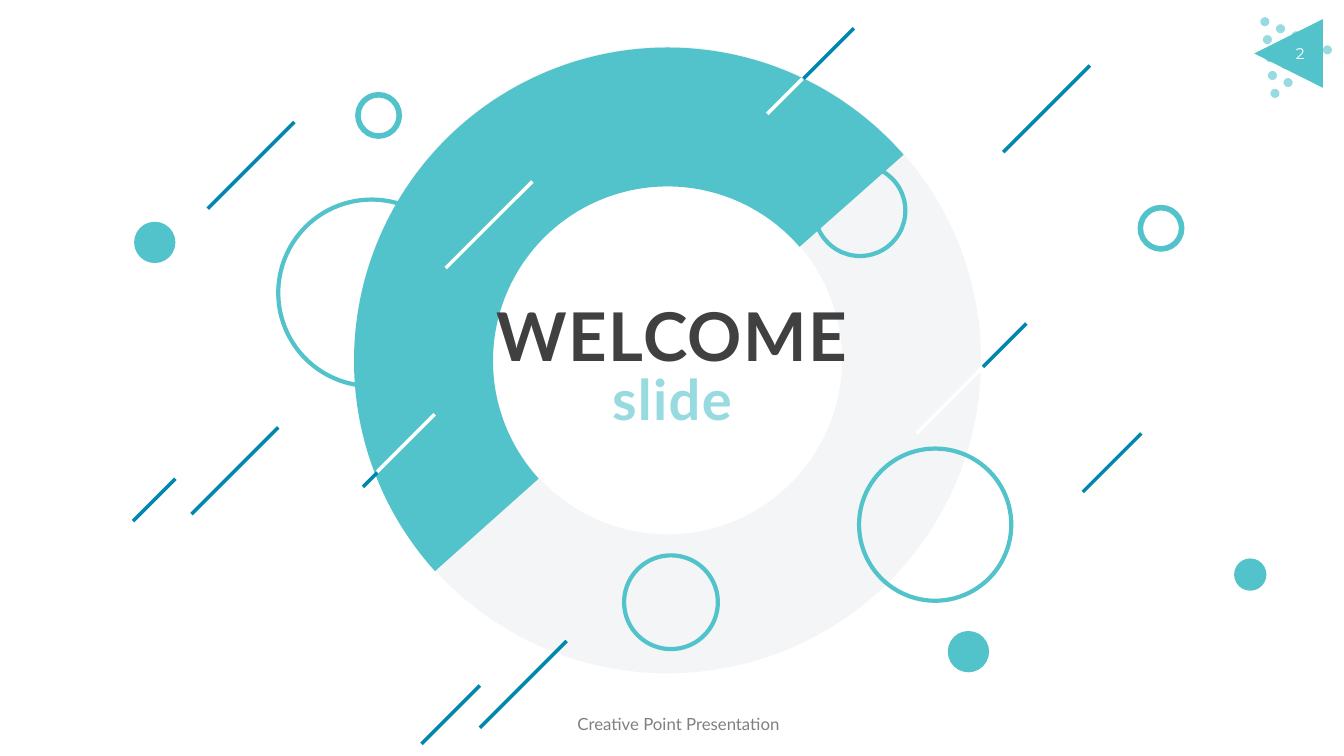
import dataclasses
import typing

import lxml.etree
import pptx
import pptx.dml.color
import pptx.enum.shapes
import pptx.enum.text
import pptx.oxml.ns
import pptx.util

Inches = pptx.util.Inches
Pt = pptx.util.Pt
Kind = pptx.enum.shapes.MSO_SHAPE

TEAL, PALE, BLUE = "52C3CB", "97DAE0", "0187AD"
GREY, WHITE, DARK, MID = "F4F5F6", "FFFFFF", "404040", "808080"


@dataclasses.dataclass
class Form:
    x: float
    y: float
    size: float
    fill: typing.Optional[str] = None
    line: typing.Optional[str] = None
    width: float = 0
    kind: Kind = Kind.OVAL
    turn: float = 0
    angles: tuple = ()


@dataclasses.dataclass
class Dash:
    """A line rising at 45 degrees from its lower left end."""
    x: float
    y: float
    rise: float
    color: str = BLUE


@dataclasses.dataclass
class Label:
    text: str
    box: tuple
    font: dict
    color: str
    frame: dict = dataclasses.field(default_factory=dict)
    para: dict = dataclasses.field(default_factory=dict)
    gap: int = 0


def paint(target, color: str) -> None:
    target.rgb = pptx.dml.color.RGBColor.from_string(color)


def assign(target, values: dict) -> None:
    for name, value in values.items():
        setattr(target, name, value)


def draw_form(shapes, form: Form) -> None:
    shape = shapes.add_shape(form.kind, Inches(form.x), Inches(form.y),
                             Inches(form.size), Inches(form.size))
    shape.shadow.inherit = False
    shape.rotation = form.turn
    for i, angle in enumerate(form.angles):
        shape.adjustments[i] = angle * 0.6  # 60000ths of a degree, per 100000
    if form.fill:
        shape.fill.solid()
        paint(shape.fill.fore_color, form.fill)
    else:
        shape.fill.background()
    if form.line:
        paint(shape.line.color, form.line)
        shape.line.width = Pt(form.width)
    else:
        shape.line.fill.background()


def draw_dash(shapes, dash: Dash) -> None:
    line = shapes.add_connector(
        pptx.enum.shapes.MSO_CONNECTOR.STRAIGHT, Inches(dash.x), Inches(dash.y),
        Inches(dash.x + dash.rise), Inches(dash.y - dash.rise))
    paint(line.line.color, dash.color)
    line.line.width = Pt(2.5)
    lxml.etree.SubElement(line._element.spPr, pptx.oxml.ns.qn("a:effectLst"))


def draw_label(shapes, label: Label) -> None:
    frame = shapes.add_textbox(*map(Inches, label.box)).text_frame
    assign(frame, {"word_wrap": True,
                   "auto_size": pptx.enum.text.MSO_AUTO_SIZE.SHAPE_TO_FIT_TEXT,
                   **label.frame})
    para = frame.paragraphs[0]
    assign(para, {"alignment": pptx.enum.text.PP_ALIGN.CENTER, **label.para})
    run = para.add_run()
    run.text = label.text
    assign(run.font, label.font)
    paint(run.font.color, label.color)
    if label.gap:
        run.font._element.set("spc", str(label.gap))


# The arc angles are in degrees, before the turn
WHEEL = [
    Form(4.2, 1.15, 4.84, line=GREY, width=99.25, turn=165),
    Form(4.2, 1.16, 4.84, line=TEAL, width=99.25, kind=Kind.ARC, turn=165,
         angles=(332.77, 153.97)),
]

# Slanted columns, each one dot shorter than the last
DOTS = [
    Form(12.5 + 0.155 * col + 0.025 * row, 0.17 + 0.07 * col + 0.178 * row,
         0.09, fill=PALE)
    for col in range(5) for row in range(5 - col)
]

FORMS = [
    Form(9.4, 6.26, 0.41, fill=TEAL),
    Form(12.24, 5.54, 0.32, fill=TEAL),
    Form(1.33, 2.2, 0.41, fill=TEAL),
    Form(3.55, 0.94, 0.41, line=TEAL, width=4),
    Form(11.31, 2.06, 0.41, line=TEAL, width=4),
    Form(6.19, 5.51, 0.93, line=TEAL, width=3),
    Form(2.76, 1.98, 1.85, line=TEAL, width=3),
    Form(8.52, 4.45, 1.51, line=TEAL, width=3),
    Form(8.08, 1.64, 0.9, line=TEAL, width=3),
    Form(12.44, 0.19, 0.68, fill=TEAL, kind=Kind.ISOSCELES_TRIANGLE, turn=270),
]

DASHES = [
    Dash(3.6, 4.83, 0.14), Dash(1.9, 5.1, 0.86), Dash(4.18, 7.38, 0.58),
    Dash(4.76, 7.22, 0.86), Dash(9.75, 3.64, 0.43), Dash(1.32, 5.17, 0.42),
    Dash(9.95, 1.51, 0.86), Dash(7.97, 0.78, 0.5), Dash(2.06, 2.07, 0.86),
    Dash(10.74, 4.88, 0.58),
    Dash(9.09, 4.3, 0.65, WHITE), Dash(7.61, 1.13, 0.35, WHITE),
    Dash(3.74, 4.68, 0.57, WHITE), Dash(4.42, 2.66, 0.86, WHITE),
]

LABELS = [
    Label("WELCOME", (4.81, 2.87, 3.71, 0.91),
          {"name": "Lato", "size": Pt(48), "bold": True}, DARK, gap=100),
    Label("slide", (4.81, 3.57, 3.71, 0.77),
          {"name": "Lato", "size": Pt(40), "bold": True}, PALE, gap=100),
    Label("Creative Point Presentation", (4.99, 6.95, 3.48, 0.35),
          {"name": "Lato", "size": Pt(12)}, MID,
          frame={"margin_left": 0, "margin_right": 0},
          para={"line_spacing": Pt(20)}),
    Label("2", (12.67, 0.39, 0.45, 0.29),
          {"name": "Montserrat", "size": Pt(11)}, WHITE),
]


def main() -> None:
    deck = pptx.Presentation()
    assign(deck, {"slide_width": Inches(13.33), "slide_height": Inches(7.5)})
    shapes = deck.slides.add_slide(deck.slide_layouts[6]).shapes

    # Big wheel
    for form in WHEEL:
        draw_form(shapes, form)

    # Corner dots
    group = shapes.add_group_shape()
    for dot in DOTS:
        draw_form(group.shapes, dot)

    # Circles, corner mark, dashes and text
    for form in FORMS:
        draw_form(shapes, form)
    for dash in DASHES:
        draw_dash(shapes, dash)
    for label in LABELS:
        draw_label(shapes, label)

    deck.save("out.pptx")


if __name__ == "__main__":
    main()
